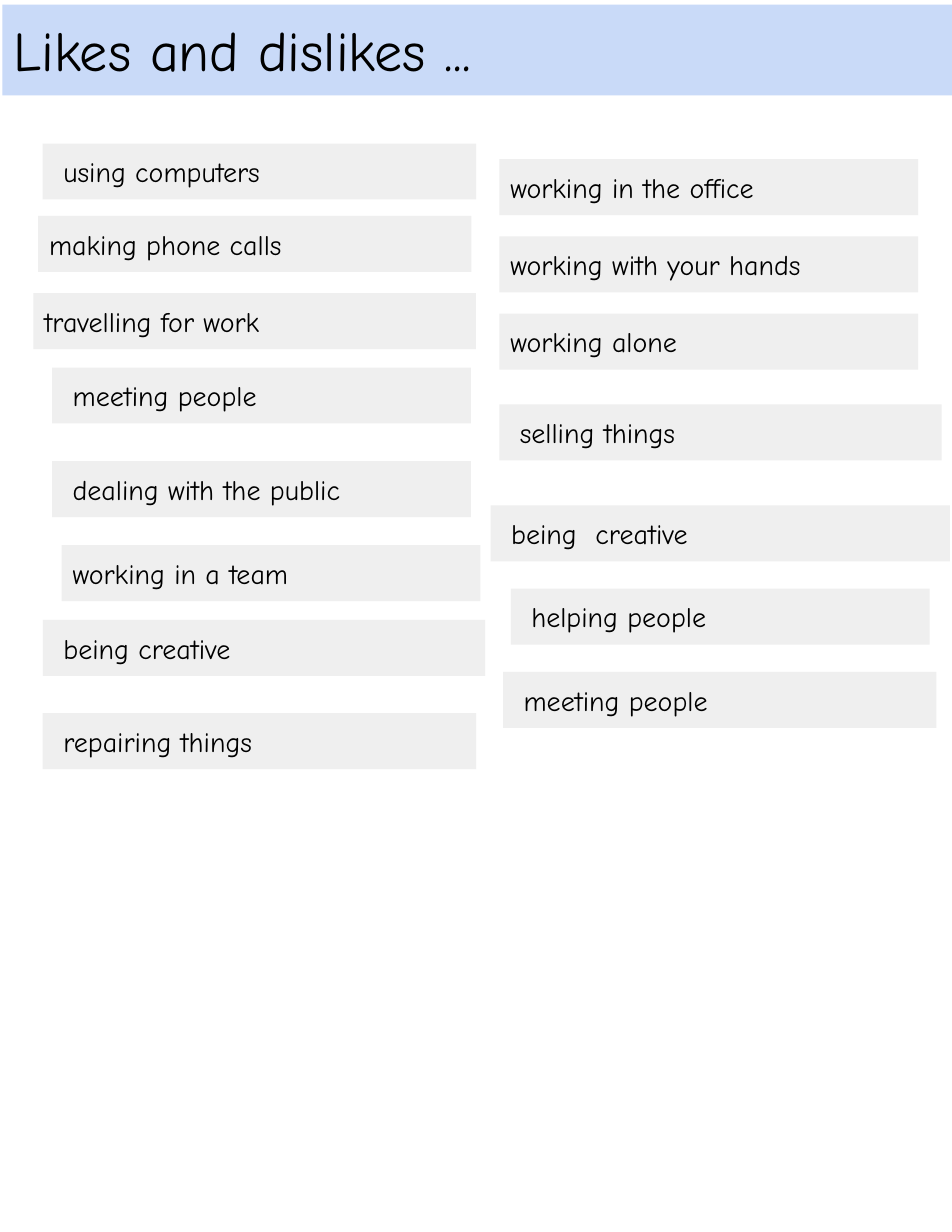
from dataclasses import dataclass

from pptx import Presentation
from pptx.dml.color import RGBColor
from pptx.enum import shapes, text
from pptx.util import Pt


@dataclass(frozen=True)
class Theme:
    font: str = "Comic Neue"
    ink: RGBColor = RGBColor(0x00, 0x00, 0x00)
    banner: RGBColor = RGBColor(0xC9, 0xDA, 0xF8)
    card: RGBColor = RGBColor(0xEF, 0xEF, 0xEF)
    title_size: int = 36
    card_size: int = 18
    inset: float = 7.2
    indent: float = 6
    card_height: float = 36


class Page:
    def __init__(self, slide, theme):
        self.slide = slide
        self.theme = theme

    def panel(self, wording, left, top, width, height, fill, size, indent=0):
        """Draw a filled rectangle with left-aligned text."""
        theme = self.theme
        panel = self.slide.shapes.add_shape(
            shapes.MSO_SHAPE.RECTANGLE, Pt(left), Pt(top), Pt(width), Pt(height))
        panel.shadow.inherit = False
        panel.fill.solid()
        panel.fill.fore_color.rgb = fill
        panel.line.fill.background()

        frame = panel.text_frame
        frame.word_wrap = True
        frame.auto_size = text.MSO_AUTO_SIZE.SHAPE_TO_FIT_TEXT
        frame.vertical_anchor = text.MSO_ANCHOR.TOP
        frame.margin_left = Pt(theme.inset + indent)
        frame.margin_right = frame.margin_top = frame.margin_bottom = Pt(theme.inset)

        line = frame.paragraphs[0]
        line.text = wording
        line.alignment = text.PP_ALIGN.LEFT
        line.font.name = theme.font
        line.font.size = Pt(size)
        line.font.color.rgb = theme.ink

    def title(self, wording):
        self.panel(wording, 1.5, 3, 612, 58.3, self.theme.banner, self.theme.title_size)

    def card(self, wording, left, top, width, indented):
        theme = self.theme
        self.panel(wording, left, top, width, theme.card_height, theme.card,
                   theme.card_size, theme.indent if indented else 0)


NARROW, MEDIUM, WIDE, WIDEST = 269.3, 278.6, 284.4, 295.2

# wording, left, top, width, indented
LEFT_COLUMN = [
    ("using computers", 27.5, 92.3, MEDIUM, True),
    ("making phone calls", 24.5, 138.8, MEDIUM, False),
    ("travelling for work", 21.5, 188.5, WIDE, False),
    ("meeting people", 33.5, 236.3, NARROW, True),
    ("dealing with the public", 33.5, 296.5, NARROW, True),
    ("working in a team", 39.6, 350.5, NARROW, False),
    ("being creative", 27.5, 398.5, WIDE, True),
    ("repairing things", 27.5, 458.5, MEDIUM, True),
]
RIGHT_COLUMN = [
    ("working in the office", 321, 102.3, NARROW, False),
    ("working with your hands", 321, 152, NARROW, False),
    ("working alone", 321, 201.7, NARROW, False),
    ("selling things", 321, 260, WIDE, True),
    ("being  creative", 315.4, 325, WIDEST, True),
    ("helping people", 328.4, 378.5, NARROW, True),
    ("meeting people", 323.4, 432, MEDIUM, True),
]


def main():
    deck = Presentation()
    deck.slide_width, deck.slide_height = Pt(612), Pt(792)
    page = Page(deck.slides.add_slide(deck.slide_layouts[6]), Theme())
    page.title("Likes and dislikes ...")
    for card in LEFT_COLUMN + RIGHT_COLUMN:
        page.card(*card)
    deck.save("out.pptx")


if __name__ == "__main__":
    main()
